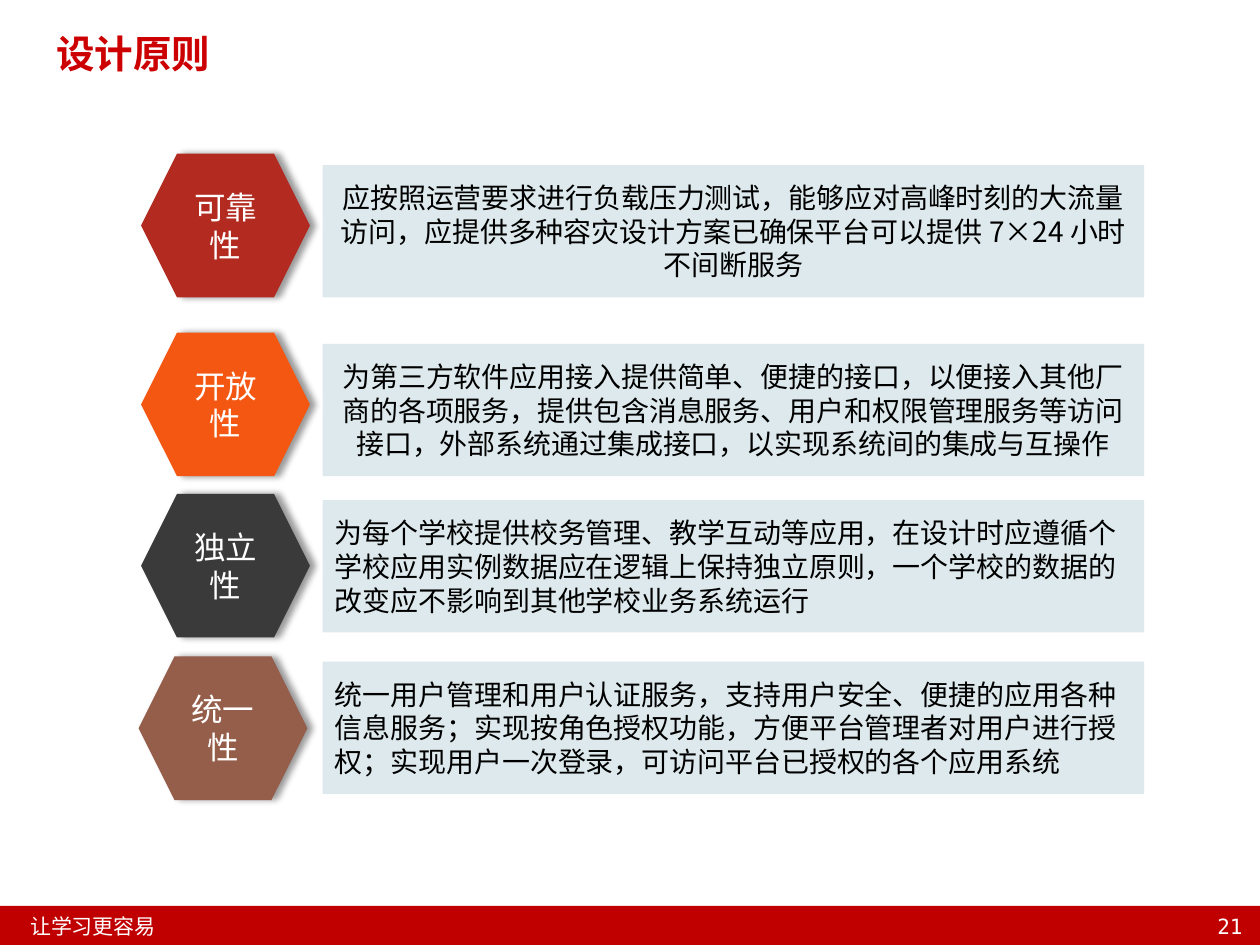
from dataclasses import dataclass

from lxml.etree import SubElement
from pptx import Presentation
from pptx.dml.color import RGBColor
from pptx.enum.shapes import MSO_SHAPE as Preset
from pptx.enum.text import MSO_ANCHOR as Anchor, PP_ALIGN as Align
from pptx.oxml import parse_xml
from pptx.oxml.ns import nsdecls, qn
from pptx.util import Inches, Pt


@dataclass(frozen=True)
class Theme:
    """Colours, fonts and type sizes of the slide."""
    red: str = "C00000"
    title_red: str = "CC0000"
    panel: str = "DDE9EC"
    white: str = "FFFFFF"
    black: str = "000000"
    body_font: str = "Noto Sans CJK SC"
    label_font: str = "Calibri"
    footer_font: str = "Arial"
    number_font: str = "DejaVu Sans Mono"
    title_size: int = 22
    label_size: int = 18
    body_size: int = 16
    footer_size: int = 12
    leading: float = 1.2


THEME = Theme()
CELL = 0.1
LABEL_SIZE = (13.4, 11.4)
PANEL_LEFT, PANEL_SIZE = 25.6, (65.2, 10.5)
PRINCIPLES = [
    ("可靠性", "B32A20", THEME.label_font, (11.2, 12.2), 13.1, Align.CENTER,
     "应按照运营要求进行负载压力测试，能够应对高峰时刻的大流量访问，"
     "应提供多种容灾设计方案已确保平台可以提供 7×24 小时不间断服务"),
    ("开放性", "F45712", THEME.label_font, (11.2, 26.4), 27.3, Align.CENTER,
     "为第三方软件应用接入提供简单、便捷的接口，以便接入其他厂商的各项服务，"
     "提供包含消息服务、用户和权限管理服务等访问接口，"
     "外部系统通过集成接口，以实现系统间的集成与互操作"),
    ("独立性", "3A3A3A", THEME.body_font, (11.2, 39.2), 39.7, Align.LEFT,
     "为每个学校提供校务管理、教学互动等应用，在设计时应遵循个学校应用实例数据"
     "应在逻辑上保持独立原则，一个学校的数据的改变应不影响到其他学校业务系统运行"),
    ("统一性", "955E4B", THEME.body_font, (11.0, 52.1), 52.5, Align.LEFT,
     "统一用户管理和用户认证服务，支持用户安全、便捷的应用各种信息服务；"
     "实现按角色授权功能，方便平台管理者对用户进行授权；"
     "实现用户一次登录，可访问平台已授权的各个应用系统"),
]


def write_text(shape, text, *, size, color, font=THEME.body_font, bold=False,
               align=Align.LEFT, anchor=Anchor.TOP):
    """Put one formatted paragraph into a shape."""
    frame = shape.text_frame
    frame.word_wrap = True
    frame.vertical_anchor = anchor
    paragraph = frame.paragraphs[0]
    paragraph.alignment = align
    paragraph.line_spacing = Pt(round(size * THEME.leading, 1))
    run = paragraph.add_run()
    run.text = text
    run.font.name = font
    run.font.size = Pt(size)
    run.font.bold = bold
    run.font.color.rgb = RGBColor.from_string(color)
    SubElement(run.font._element, qn("a:ea"), typeface=THEME.body_font)


class SlideBuilder:
    """Draws themed elements on a grid of 100 columns by 75 rows."""

    def __init__(self, slide, theme):
        """Keep the slide and its theme."""
        self.slide, self.theme = slide, theme

    def place(self, *cells):
        """Turn grid cells into lengths."""
        return [Inches(round(cell * CELL, 2)) for cell in cells]

    def block(self, preset, color, *cells):
        """Add a filled shape without outline or shadow."""
        shape = self.slide.shapes.add_shape(preset, *self.place(*cells))
        shape.shadow.inherit = False
        shape.fill.solid()
        shape.fill.fore_color.rgb = RGBColor.from_string(color)
        shape.line.fill.background()
        return shape

    def caption(self, text, *cells, **text_format):
        """Add a text box."""
        box = self.slide.shapes.add_textbox(*self.place(*cells))
        write_text(box, text, **text_format)

    def label(self, text, color, font, left, top):
        """Add a hexagon with a soft shadow to its right."""
        hexagon = self.block(Preset.HEXAGON, color, left, top, *LABEL_SIZE)
        effects = hexagon._element.spPr.find(qn("a:effectLst"))
        effects.append(parse_xml(
            f'<a:outerShdw {nsdecls("a")} blurRad="{Pt(4)}" dist="{Pt(3)}" dir="0" '
            f'algn="l" rotWithShape="0"><a:srgbClr val="{self.theme.black}">'
            '<a:alpha val="40000"/></a:srgbClr></a:outerShdw>'))
        write_text(hexagon, text, size=self.theme.label_size, color=self.theme.white,
                   font=font, align=Align.CENTER, anchor=Anchor.MIDDLE)

    def panel(self, text, top, align):
        """Add the pale box that explains a principle."""
        box = self.block(Preset.RECTANGLE, self.theme.panel, PANEL_LEFT, top, *PANEL_SIZE)
        write_text(box, text, size=self.theme.body_size, color=self.theme.black,
                   align=align, anchor=Anchor.MIDDLE)

    def footer(self, slogan, number):
        """Add the bottom band with slogan and page number."""
        style = dict(size=self.theme.footer_size, color=self.theme.white)
        self.block(Preset.RECTANGLE, self.theme.red, 0, 71.9, 100, 3.1)
        self.caption(slogan, 1.4, 72, 17.2, 3, font=self.theme.footer_font, **style)
        self.caption(number, 93.8, 72, 5.8, 3, font=self.theme.number_font,
                     align=Align.RIGHT, **style)


def main():
    """Build and save the slide."""
    presentation = Presentation()
    presentation.slide_width, presentation.slide_height = Inches(10), Inches(7.5)
    slide = presentation.slides.add_slide(presentation.slide_layouts[6])
    builder = SlideBuilder(slide, THEME)
    builder.footer("让学习更容易", "21")
    builder.caption("设计原则", 3.5, 1.9, 79.2, 6.7, size=THEME.title_size,
                    color=THEME.title_red, bold=True)
    for name, color, font, corner, panel_top, align, text in PRINCIPLES:
        builder.label(name, color, font, *corner)
        builder.panel(text, panel_top, align)
    presentation.save("out.pptx")


if __name__ == "__main__":
    main()
